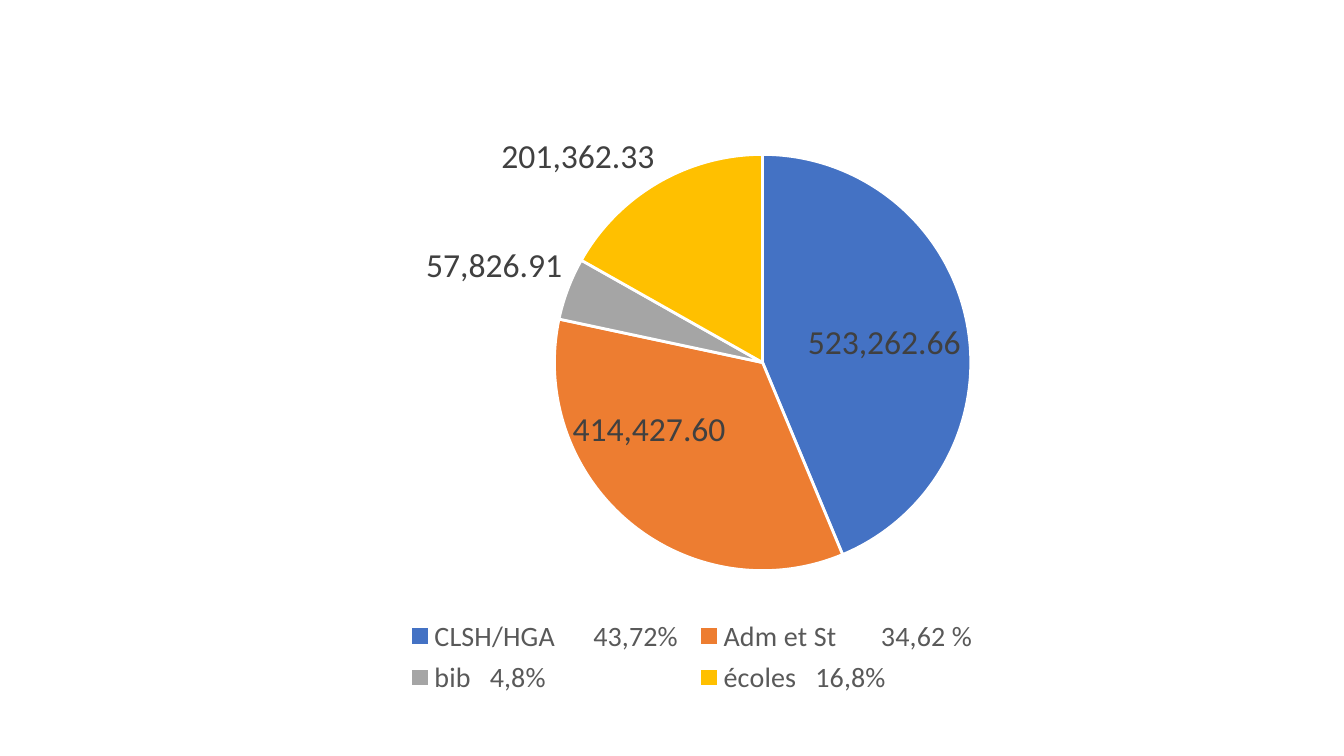
from lxml import etree
from pptx import Presentation
from pptx import util as u
from pptx.chart.data import CategoryChartData
from pptx.dml.color import RGBColor
from pptx.enum import chart as charts
from pptx.oxml.ns import qn

COLORS = {"label": "404040", "legend": "595959", "edge": "FFFFFF",
          "blue": "4472C4", "orange": "ED7D31", "grey": "A5A5A5", "gold": "FFC000"}
PLACE = charts.XL_LABEL_POSITION
SHARES = [
    ("CLSH/HGA      43,72%", 523262.66, "blue", PLACE.INSIDE_END, None),
    ("Adm et St       34,62 %", 414427.60, "orange", PLACE.CENTER, (-0.04, -0.02)),
    ("bib   4,8%", 57826.91, "grey", PLACE.OUTSIDE_END, None),
    ("écoles   16,8%", 201362.33, "gold", PLACE.OUTSIDE_END, None),
]
NUMBER_FORMAT = "#,##0.00"


def style_font(font, size, color):
    """Give a chart font its face, size and colour."""
    font.name = "Calibri"
    font.size = u.Pt(size)
    font.color.rgb = RGBColor.from_string(COLORS[color])


def manual_layout(**settings):
    """Return a chart layout element with the given settings in order."""
    layout = etree.Element(qn("c:layout"))
    manual = etree.SubElement(layout, qn("c:manualLayout"))
    for name, value in settings.items():
        etree.SubElement(manual, qn(f"c:{name}")).set("val", str(value))
    return layout


def place_inside(element, **settings):
    """Replace the layout of a plot area or legend."""
    for old in element.findall(qn("c:layout")):
        element.remove(old)
    layout = manual_layout(**settings)
    position = element.find(qn("c:legendPos"))
    if position is None:
        element.insert(0, layout)
    else:
        position.addnext(layout)


def style_slices(series):
    """Colour each slice and place its value label."""
    for index, (_, _, color, position, shift) in enumerate(SHARES):
        point = series.points[index]
        point.format.fill.solid()
        point.format.fill.fore_color.rgb = RGBColor.from_string(COLORS[color])
        point.format.line.width = u.Pt(2)
        point.format.line.color.rgb = RGBColor.from_string(COLORS["edge"])
        style_font(point.data_label.font, 24, "label")
        point.data_label.position = position
        if shift:
            label = series.data_labels._element.findall(qn("c:dLbl"))[index]
            label.find(qn("c:idx")).addnext(manual_layout(x=shift[0], y=shift[1]))


def add_budget_pie(page, left, top, width, height):
    """Draw the budget pie with its legend in the given box."""
    data = CategoryChartData(number_format=NUMBER_FORMAT)
    data.categories = [share[0] for share in SHARES]
    data.add_series("Series 1", [share[1] for share in SHARES])
    chart = page.shapes.add_chart(
        charts.XL_CHART_TYPE.PIE, left, top, width, height, data).chart
    style_font(chart.font, 10, "label")
    chart.has_title = False
    chart.has_legend = True
    chart.legend.position = charts.XL_LEGEND_POSITION.BOTTOM
    chart.legend.include_in_layout = False
    style_font(chart.legend.font, 20, "legend")
    plot = chart.plots[0]
    plot.vary_by_categories = True
    series = plot.series[0]
    labels = series.data_labels
    labels.show_value = True
    labels.show_percentage = False
    labels.number_format = NUMBER_FORMAT
    labels.number_format_is_linked = False
    style_font(labels.font, 24, "label")
    style_slices(series)
    place_inside(chart._chartSpace.chart.plotArea, layoutTarget="inner",
                 xMode="edge", yMode="edge", x=0.38, y=0.08, w=0.36, h=0.7)
    place_inside(chart.legend._element,
                 xMode="edge", yMode="edge", x=0.25, y=0.85, w=0.5, h=0.15)


def main():
    """Build the one-slide deck."""
    deck = Presentation()
    deck.slide_width, deck.slide_height = u.Inches(13.33), u.Inches(7.5)
    page = deck.slides.add_slide(deck.slide_layouts[6])
    add_budget_pie(page, u.Inches(1.04), u.Inches(1.06), u.Inches(11.65), u.Inches(5.9))
    deck.save("out.pptx")


if __name__ == "__main__":
    main()
